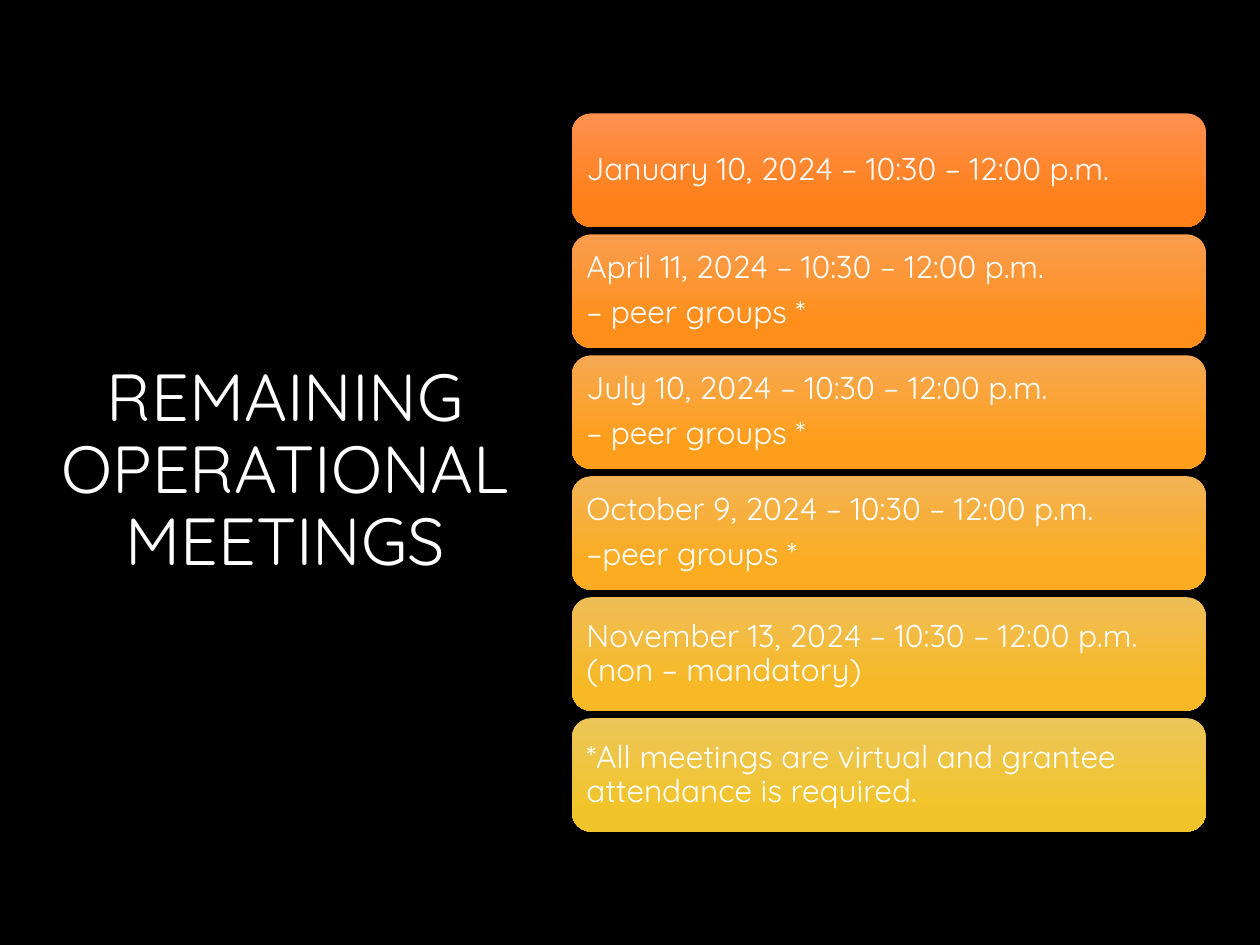
from dataclasses import dataclass

from pptx import Presentation
from pptx.dml.color import RGBColor
from pptx.enum.shapes import MSO_SHAPE as Preset
from pptx.enum.text import MSO_ANCHOR as Anchor, MSO_AUTO_SIZE as AutoSize, PP_ALIGN as Align
from pptx.util import Inches, Pt


@dataclass(frozen=True)
class Theme:
    """Colours, type and grid measures."""
    background: str = "000000"
    ink: str = "FFFFFF"
    font: str = "Quicksand"
    title_size: float = 38
    card_size: float = 18
    line_spacing: float = 0.9
    paragraph_gap: float = 6.3
    cell: float = 0.1
    inset: float = 0.07
    gradient_end: float = 0.78


MEETINGS = [
    (["January 10, 2024 – 10:30 – 12:00 p.m."], "FE904F", "FF8019"),
    (["April 11, 2024 – 10:30 – 12:00 p.m.", "– peer groups *"], "FA9D50", "FF8F1A"),
    (["July 10, 2024 – 10:30 – 12:00 p.m.", "– peer groups *"], "F6A852", "FF9E1B"),
    (["October 9, 2024 – 10:30 – 12:00 p.m.", "–peer groups *"], "F3B354", "FBAC20"),
    (["November 13, 2024 – 10:30 – 12:00 p.m. (non – mandatory)"], "EFBD57", "F7B926"),
    (["*All meetings are virtual and grantee attendance is required."], "EBC659", "F2C42C"),
]


def write(frame, paragraphs, *, theme, size, align, gap=0):
    """Fill a text frame with evenly formatted paragraphs."""
    frame.word_wrap = True
    frame.auto_size = AutoSize.NONE
    frame.vertical_anchor = Anchor.MIDDLE
    for index, wording in enumerate(paragraphs):
        paragraph = frame.add_paragraph() if index else frame.paragraphs[0]
        paragraph.text = wording
        paragraph.alignment = align
        paragraph.line_spacing = theme.line_spacing
        paragraph.space_before = Pt(0)
        paragraph.space_after = Pt(gap)
        for run in paragraph.runs:
            run.font.name = theme.font
            run.font.size = Pt(size)
            run.font.color.rgb = RGBColor.from_string(theme.ink)


class SlideBuilder:
    """Places styled elements on a slide, measured in grid cells."""

    def __init__(self, deck, theme):
        """Add a title-only slide with a plain background."""
        self.theme = theme
        self.slide = deck.slides.add_slide(deck.slide_layouts[5])
        backdrop = self.slide.background.fill
        backdrop.solid()
        backdrop.fore_color.rgb = RGBColor.from_string(theme.background)

    def cells(self, *counts):
        """Turn grid cell counts into lengths."""
        return [Inches(count * self.theme.cell) for count in counts]

    def title(self, wording, *area):
        """Move and format the title placeholder."""
        heading = self.slide.shapes.title
        heading.left, heading.top, heading.width, heading.height = self.cells(*area)
        write(heading.text_frame, [wording], theme=self.theme,
              size=self.theme.title_size, align=Align.CENTER)

    def card(self, paragraphs, top_color, bottom_color, *area):
        """Draw a rounded gradient card holding its text."""
        card = self.slide.shapes.add_shape(Preset.ROUNDED_RECTANGLE, *self.cells(*area))
        card.shadow.inherit = False
        card.line.fill.background()
        card.fill.gradient()
        card.fill.gradient_angle = 270
        stops = zip(card.fill.gradient_stops, (0, self.theme.gradient_end), (top_color, bottom_color))
        for stop, position, color in stops:
            stop.position = position
            stop.color.rgb = RGBColor.from_string(color)
        frame = card.text_frame
        inset = Inches(self.theme.inset)
        frame.margin_left = frame.margin_right = frame.margin_top = frame.margin_bottom = inset
        write(frame, paragraphs, theme=self.theme, size=self.theme.card_size,
              align=Align.LEFT, gap=self.theme.paragraph_gap)


def main():
    """Build the meetings slide."""
    deck = Presentation()
    deck.slide_width, deck.slide_height = Inches(10), Inches(7.5)
    builder = SlideBuilder(deck, Theme())
    builder.title("REMAINING\vOPERATIONAL MEETINGS", 3.3, 20.9, 38.7, 33.1)
    first_row, row_step = 9, 9.6
    for row, (paragraphs, top_color, bottom_color) in enumerate(MEETINGS):
        builder.card(paragraphs, top_color, bottom_color,
                     45.4, first_row + row * row_step, 50.3, 9)
    deck.save("out.pptx")


if __name__ == "__main__":
    main()
